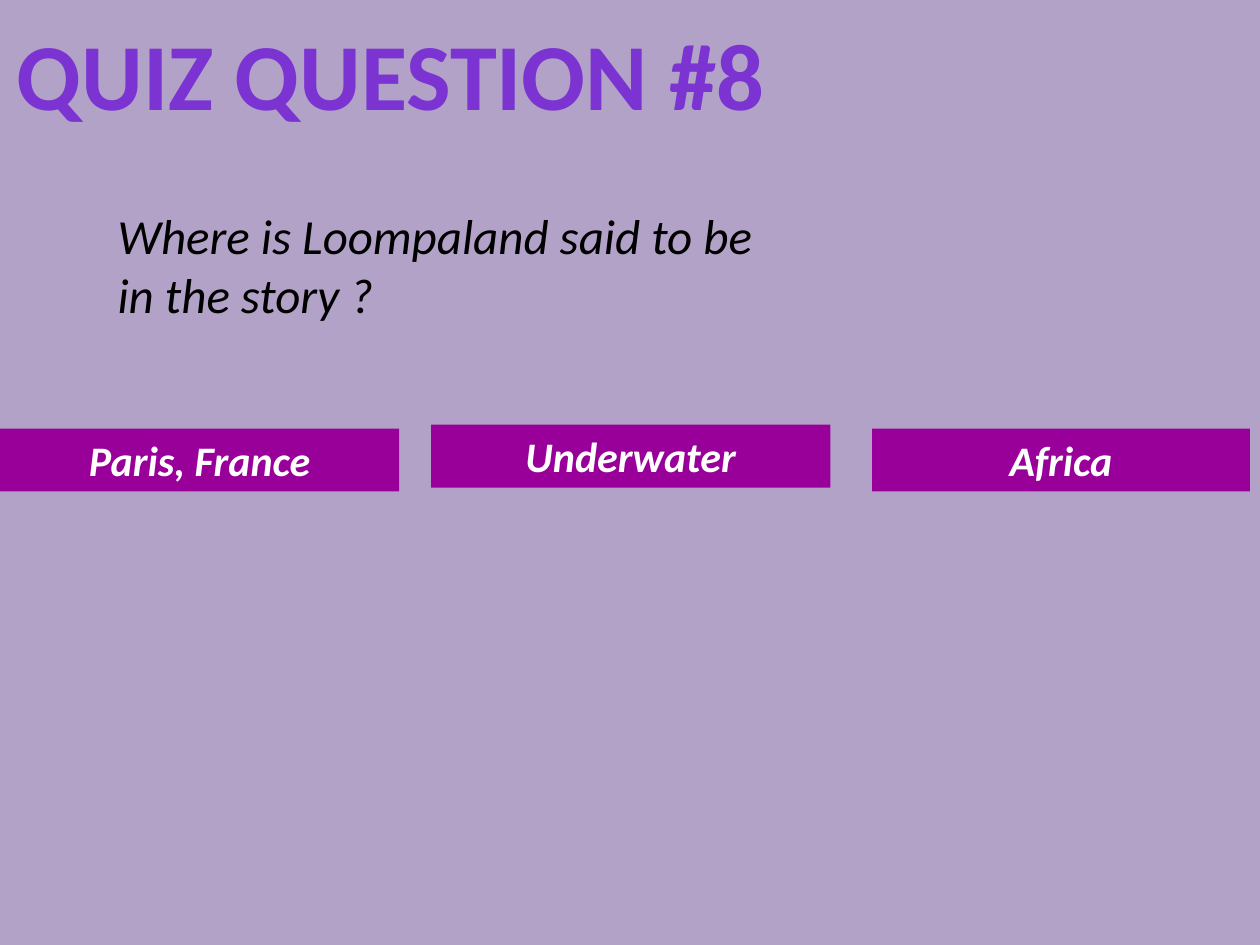
from pptx import Presentation
from pptx.dml.color import RGBColor
from pptx.enum.shapes import MSO_SHAPE as Shape
from pptx.enum.text import MSO_ANCHOR as Anchor, MSO_AUTO_SIZE as AutoSize, PP_ALIGN as Align
from pptx.util import Cm, Pt

TITLE = "QUIZ QUESTION #8"
QUESTION = "Where is Loompaland said to be in the story ?"
# answer, left, top, width in cm
ANSWERS = [
    ("Paris, France", 0, 8.64, 8.05),
    ("Underwater", 8.69, 8.56, 8.05),
    ("Africa", 17.58, 8.64, 7.62),
]
ANSWER_HEIGHT = 1.27
COLORS = {
    "background": "B3A2C7",
    "title": "7B34D2",
    "question": "000000",
    "answer": "FFFFFF",
    "answer_fill": "990099",
}


def color(name):
    return RGBColor.from_string(COLORS[name])


def write(shape, text, size, color_name, align, anchor, bold=False, italic=False, wrap=True):
    frame = shape.text_frame
    frame.text = text
    frame.word_wrap = wrap
    frame.auto_size = AutoSize.NONE
    frame.vertical_anchor = anchor
    para = frame.paragraphs[0]
    para.alignment = align
    font = para.runs[0].font
    font.name, font.size = "Calibri", Pt(size)
    font.bold, font.italic = bold, italic
    font.color.rgb = color(color_name)


deck = Presentation()
deck.slide_width, deck.slide_height = Cm(25.4), Cm(19.05)
slide = deck.slides.add_slide(deck.slide_layouts[5])
slide.background.fill.solid()
slide.background.fill.fore_color.rgb = color("background")

title = slide.shapes.title
title.left, title.top, title.width, title.height = Cm(0), Cm(0.2), Cm(15.75), Cm(2.57)
write(title, TITLE, 54, "title", Align.CENTER, Anchor.TOP, bold=True, wrap=False)

question = slide.shapes.add_textbox(Cm(2.12), Cm(4.02), Cm(13.97), Cm(2.65))
write(question, QUESTION, 28, "question", Align.LEFT, Anchor.TOP, italic=True)

for answer, left, top, width in ANSWERS:
    box = slide.shapes.add_shape(
        Shape.RECTANGLE, Cm(left), Cm(top), Cm(width), Cm(ANSWER_HEIGHT))
    box.shadow.inherit = False
    box.fill.solid()
    box.fill.fore_color.rgb = color("answer_fill")
    box.line.fill.background()
    write(box, answer, 24, "answer", Align.CENTER, Anchor.TOP, bold=True, italic=True)

deck.save("out.pptx")
